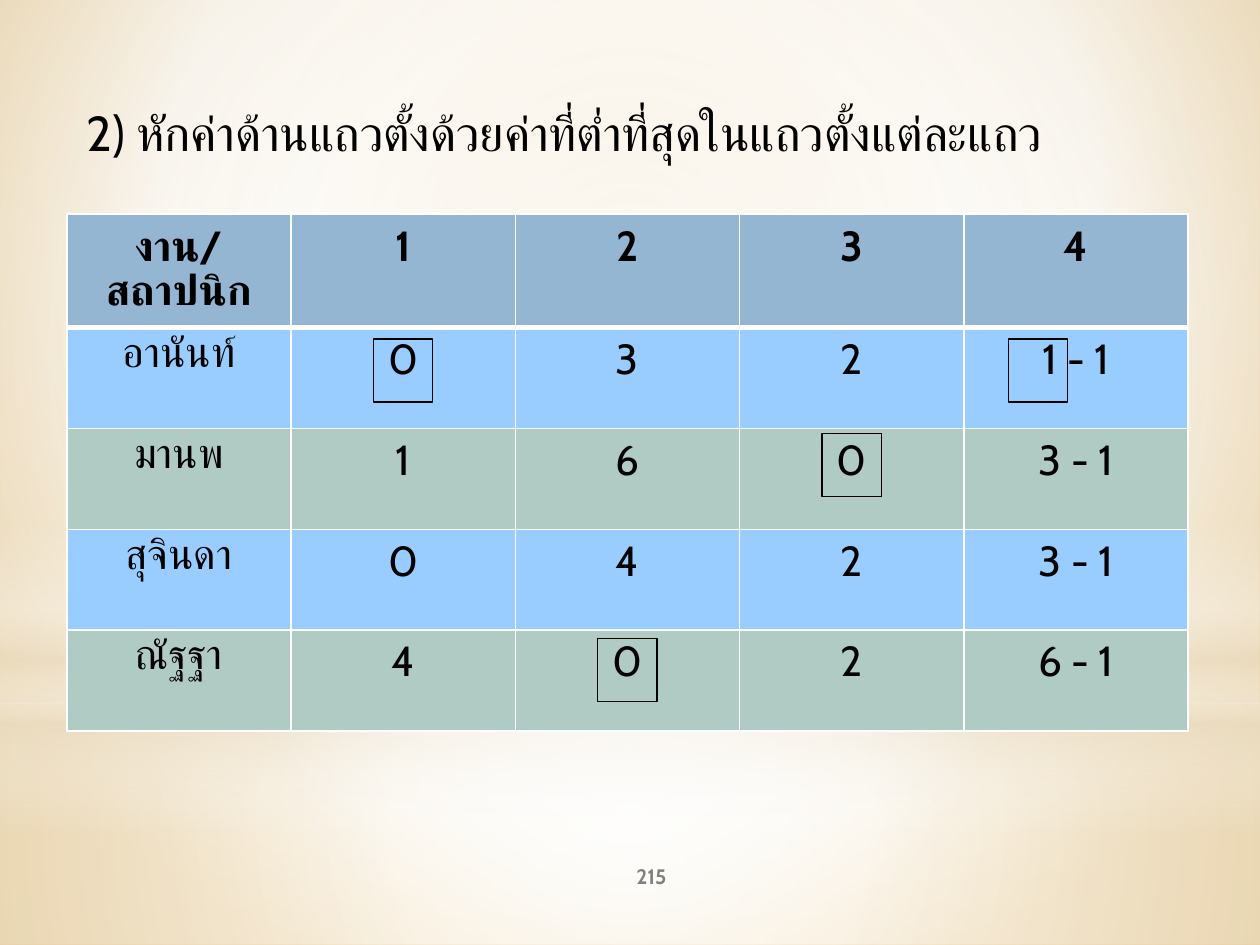
from lxml import etree
from pptx import Presentation
from pptx import util as u
from pptx.dml.color import RGBColor
from pptx.enum import shapes, text
from pptx.oxml import ns

FONT = "Cabin"
BLACK = RGBColor(0x00, 0x00, 0x00)
GRAY = RGBColor(0x80, 0x80, 0x80)
WHITE = RGBColor(0xFF, 0xFF, 0xFF)
CREAM = RGBColor(0xEB, 0xDD, 0xC3)
SAND = RGBColor(0xEC, 0xD7, 0xB0)
GOLD = RGBColor(0xE6, 0xBE, 0x74)
HEADER_BLUE = RGBColor(0x94, 0xB6, 0xD2)
ROW_FILLS = (RGBColor(0x99, 0xCC, 0xFF), RGBColor(0xB0, 0xCA, 0xC4))

# Content
HEADING = "2) หักค่าด้านแถวตั้งด้วยค่าที่ต่ำที่สุดในแถวตั้งแต่ละแถว"
PAGE_NUMBER = "215"
COSTS = [
    ["งาน/\nสถาปนิก", "1", "2", "3", "4"],
    ["อานันท์", "0", "3", "2", "1 - 1"],
    ["มานพ", "1", "6", "0", "3 - 1"],
    ["สุจินดา", "0", "4", "2", "3 - 1"],
    ["ณัฐฐา", "4", "0", "2", "6 - 1"],
]
# Column minima: row, column, shift from the cell's centre line, gap below its top
MINIMA = [(2, 3, 0, 0.05), (1, 1, 0, 0.1), (4, 2, 0, 0.08), (1, 4, -0.3, 0.1)]

# Backdrop: shape, box in inches, stops (position, colour, opacity), angle or None for radial
CENTRE = (50, 50, 50, 50)
RECT, OVAL = shapes.MSO_SHAPE.RECTANGLE, shapes.MSO_SHAPE.OVAL
BACKDROP = [
    (RECT, (0, 5.58, 10, 1.92),
     [(0, WHITE, 91), (37, WHITE, 76), (100, CREAM, 79)], None),
    (RECT, (0, 0, 10, 5.58),
     [(0, WHITE, 89), (48, WHITE, 62), (100, CREAM, 79)], None),
    (RECT, (0, 4.12, 10, 2.5),
     [(0, WHITE, 0), (29, WHITE, 30), (45, CREAM, 40),
      (55, WHITE, 26), (65, CREAM, 60), (100, WHITE, 0)], 90),
    (OVAL, (0, 1.75, 10, 5.58), [(0, WHITE, 100), (56, WHITE, 0)], None),
]

# Table grid, inches
LEFT, TOP, COLUMN, HEADER_ROW, ROW = 0.53, 1.7, 1.78, 0.89, 0.8
MARK_W, MARK_H = 0.47, 0.5


def inches(*lengths):
    return [u.Inches(length) for length in lengths]


def sub(parent, tag, **attributes):
    return etree.SubElement(parent, ns.qn(tag), {k: str(v) for k, v in attributes.items()})


def gradient(stops, angle=None, centre=CENTRE):
    fill = etree.Element(ns.qn("a:gradFill"), rotWithShape="1")
    stop_list = sub(fill, "a:gsLst")
    for position, color, opacity in stops:
        stop = sub(stop_list, "a:gs", pos=position * 1000)
        tint = sub(stop, "a:srgbClr", val=color)
        if opacity < 100:
            sub(tint, "a:alpha", val=opacity * 1000)
    if angle is None:
        path = sub(fill, "a:path", path="circle")
        sub(path, "a:fillToRect", **{side: share * 1000 for side, share in zip("ltrb", centre)})
    else:
        sub(fill, "a:lin", ang=angle * 60000, scaled=0)
    return fill


def write(frame, words, size, color=BLACK, bold=False, align=text.PP_ALIGN.CENTER):
    frame.text = words
    for paragraph in frame.paragraphs:
        paragraph.alignment = align
        font = paragraph.font
        font.name, font.size, font.bold = FONT, u.Pt(size), bold
        font.color.rgb = color


def border(cell, bottom):
    properties = cell._tc.get_or_add_tcPr()
    for side, points in (("L", 1), ("R", 1), ("T", 1), ("B", bottom)):
        line = sub(properties, f"a:ln{side}", w=u.Pt(points))
        sub(sub(line, "a:solidFill"), "a:srgbClr", val=WHITE)


def add_backdrop(slide, title):
    background = slide.element.cSld.get_or_add_bgPr()
    background.replace(background[0], gradient(
        [(0, SAND, 100), (60, WHITE, 100), (100, GOLD, 100)], centre=(20, 10, 20, 60)))
    for kind, box, stops, angle in BACKDROP:
        glow = slide.shapes.add_shape(kind, *inches(*box))
        glow.shadow.inherit = False
        glow.line.fill.background()
        glow.fill.background()
        properties = glow.element.spPr
        properties.replace(properties.find(ns.qn("a:noFill")), gradient(stops, angle))
        title.element.addprevious(glow.element)


def add_costs(slide):
    rows, columns = len(COSTS), len(COSTS[0])
    height = HEADER_ROW + ROW * (rows - 1)
    table = slide.shapes.add_table(
        rows, columns, *inches(LEFT, TOP, COLUMN * columns, height)).table
    for column in table.columns:
        column.width = u.Inches(COLUMN)
    for r, values in enumerate(COSTS):
        header = r == 0
        table.rows[r].height = u.Inches(HEADER_ROW if header else ROW)
        for c, value in enumerate(values):
            cell = table.cell(r, c)
            border(cell, 3 if header else 1)
            cell.fill.solid()
            cell.fill.fore_color.rgb = HEADER_BLUE if header else ROW_FILLS[(r - 1) % 2]
            write(cell.text_frame, value, 24, bold=header)


def add_minima(slide):
    for row, column, shift, gap in MINIMA:
        left = LEFT + COLUMN * (column + 0.5) - MARK_W / 2 + shift
        top = TOP + HEADER_ROW + ROW * (row - 1) + gap
        mark = slide.shapes.add_shape(RECT, *inches(left, top, MARK_W, MARK_H))
        mark.shadow.inherit = False
        mark.fill.background()
        mark.line.color.rgb = BLACK
        mark.line.width = u.Pt(0.75)


def main():
    deck = Presentation()
    deck.slide_width, deck.slide_height = inches(10, 7.5)
    slide = deck.slides.add_slide(deck.slide_layouts[5])

    # Heading
    title = slide.shapes.title
    title.left, title.top, title.width, title.height = inches(0.59, 0.76, 9.06, 0.57)
    write(title.text_frame, HEADING, 28, align=text.PP_ALIGN.LEFT)
    title.text_frame.vertical_anchor = text.MSO_ANCHOR.TOP
    title.text_frame.auto_size = text.MSO_AUTO_SIZE.NONE
    add_backdrop(slide, title)

    # Page number
    number = slide.shapes.add_textbox(*inches(4.17, 6.75, 2, 0.4)).text_frame
    number.word_wrap = True
    number.vertical_anchor = text.MSO_ANCHOR.MIDDLE
    write(number, PAGE_NUMBER, 12, GRAY, bold=True)

    # Cost table and its boxed minima
    add_costs(slide)
    add_minima(slide)
    deck.save("out.pptx")


if __name__ == "__main__":
    main()
